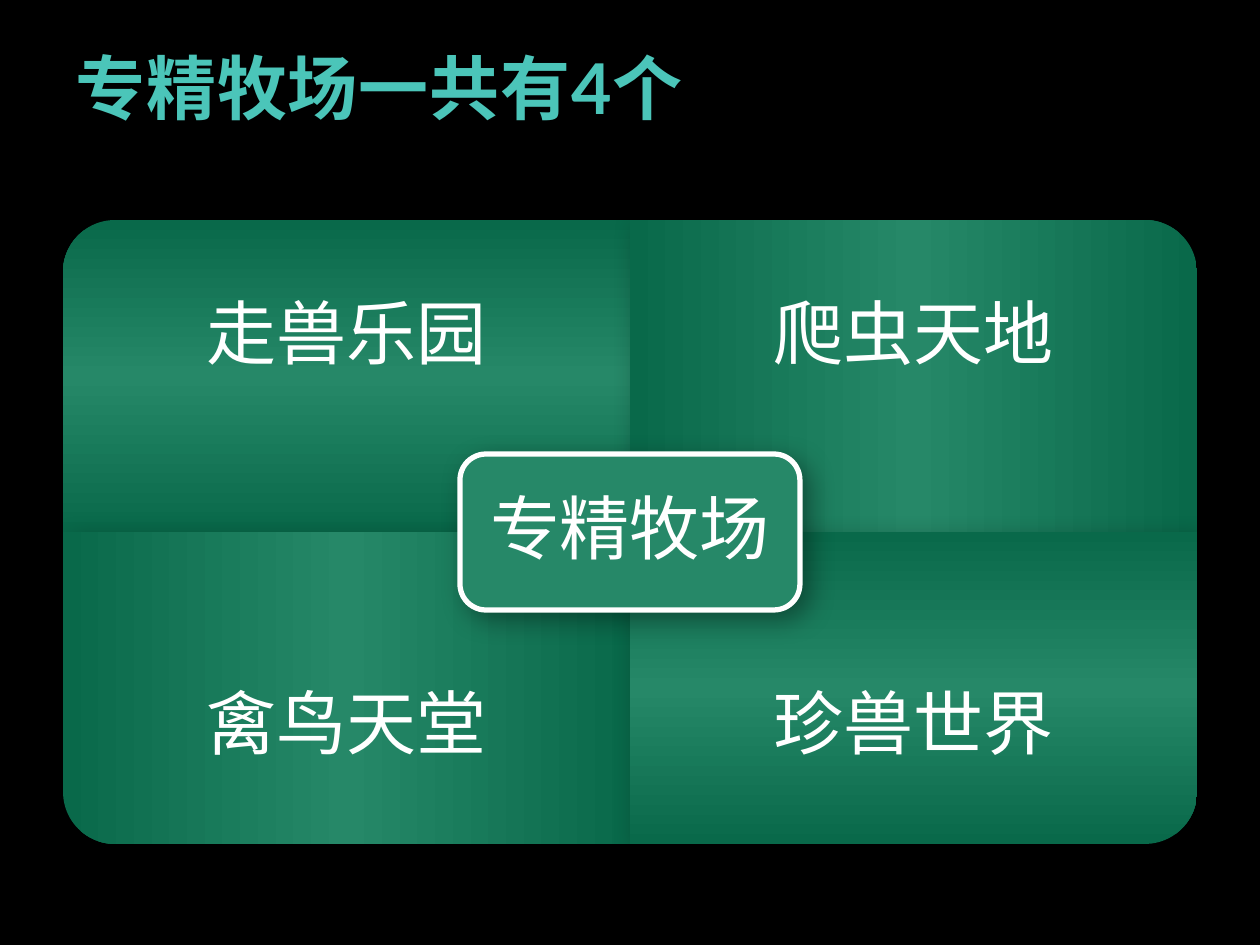
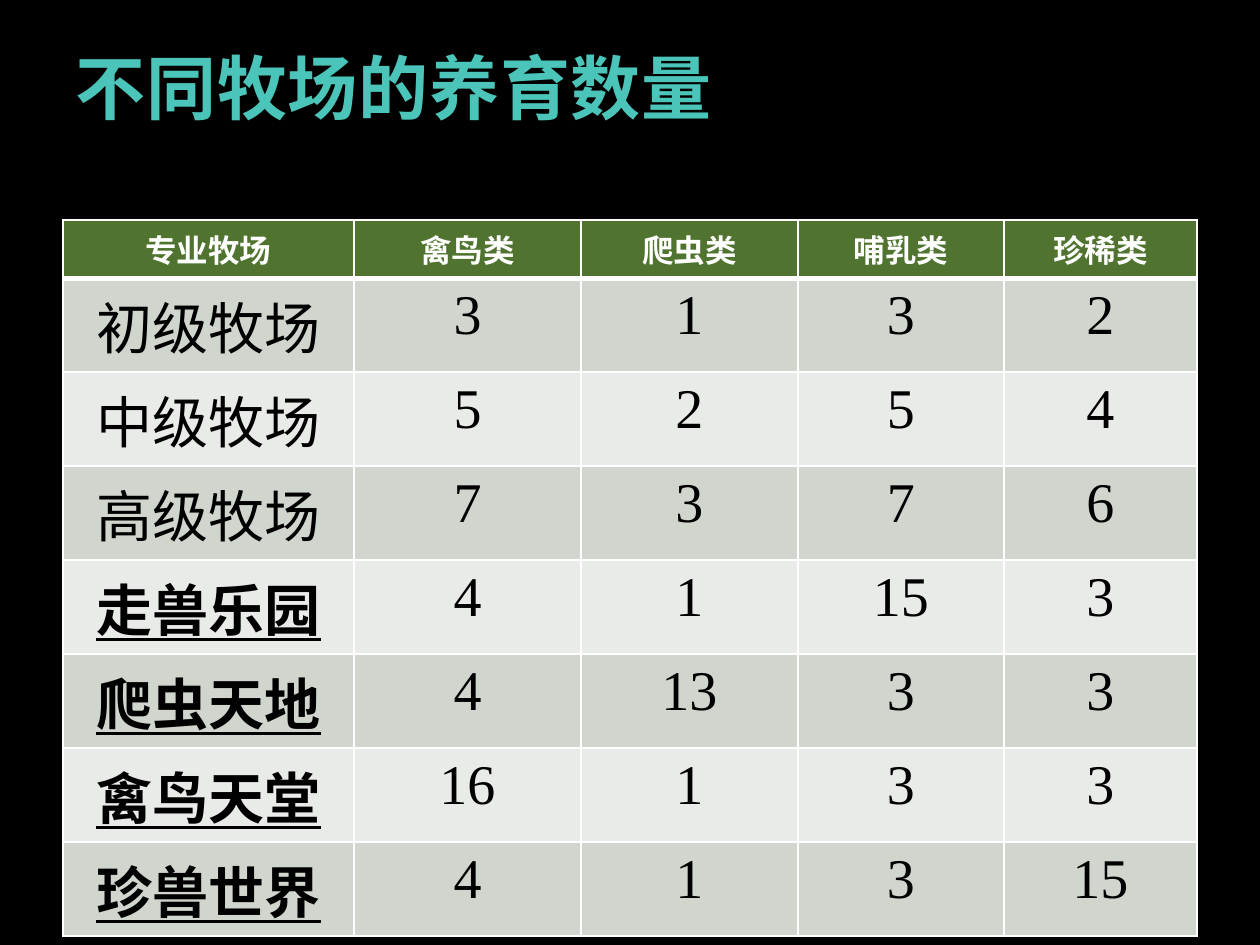
from lxml.etree import SubElement
from copy import deepcopy
from pptx import Presentation
from pptx.dml.color import RGBColor
from pptx.enum.lang import MSO_LANGUAGE_ID as Language
from pptx.enum.shapes import MSO_SHAPE as Shape
from pptx.enum.text import MSO_ANCHOR as Anchor, MSO_AUTO_SIZE as AutoSize, PP_ALIGN as Align
from pptx.oxml.ns import qn
from pptx.util import Emu, Pt

EMU_PER_PX = 914400 / 126

BLACK = RGBColor(0x00, 0x00, 0x00)
WHITE = RGBColor(0xFF, 0xFF, 0xFF)
TEAL = RGBColor(0x4B, 0xC5, 0xB9)
DARK_GREEN = RGBColor(0x09, 0x69, 0x4A)
MID_GREEN = RGBColor(0x26, 0x88, 0x68)
HEADER_GREEN = RGBColor(0x50, 0x74, 0x2F)
BANDS = (RGBColor(0xD0, 0xD6, 0xCD), RGBColor(0xE9, 0xEB, 0xE8))

TITLE_FONT, BODY_FONT = "Lato", "Times New Roman"
TITLE_BOX = (63, 38, 1071, 157)
MATRIX_BOX = (63, 220, 1134, 624)
TABLE_BOX = (63, 220, 1134, 716)

# Name, column, row and the rotation that turns the round corner outwards
QUADRANTS = [
    ("走兽乐园", 0, 0, 270),
    ("爬虫天地", 1, 0, 0),
    ("禽鸟天堂", 0, 1, 180),
    ("珍兽世界", 1, 1, 90),
]
SPECIAL_RANCHES = {name for name, *_ in QUADRANTS}
COLUMN_WIDTHS = (291, 227, 217, 206, 193)
HEADER_HEIGHT, ROW_HEIGHT = 58, 94
RANCH_ROWS = [
    ("专业牧场", "禽鸟类", "爬虫类", "哺乳类", "珍稀类"),
    ("初级牧场", 3, 1, 3, 2),
    ("中级牧场", 5, 2, 5, 4),
    ("高级牧场", 7, 3, 7, 6),
    ("走兽乐园", 4, 1, 15, 3),
    ("爬虫天地", 4, 13, 3, 3),
    ("禽鸟天堂", 16, 1, 3, 3),
    ("珍兽世界", 4, 1, 3, 15),
]


def px(*lengths):
    return [Emu(round(length * EMU_PER_PX)) for length in lengths]


def write(frame, text, size, color=WHITE, font=BODY_FONT, bold=False, underline=False,
          align=Align.CENTER, line_spacing=None):
    paragraph = frame.paragraphs[0]
    paragraph.alignment = align
    if line_spacing:
        paragraph.line_spacing = line_spacing
    run = paragraph.add_run()
    run.text = text
    run.font.name = font
    run.font.size = Pt(size)
    run.font.bold = bold
    run.font.underline = underline
    run.font.color.rgb = color
    run.font.language_id = Language.SIMPLIFIED_CHINESE
    return run


def write_label(shape, text, inset):
    frame = shape.text_frame
    frame.word_wrap = True
    frame.vertical_anchor = Anchor.MIDDLE
    frame.margin_left, frame.margin_top, frame.margin_right, frame.margin_bottom = px(*[inset] * 4)
    write(frame, text, 40, line_spacing=0.9)


def add_titled_slide(presentation, title):
    slide = presentation.slides.add_slide(presentation.slide_layouts[5])
    shape = slide.shapes.title
    shape.left, shape.top, shape.width, shape.height = px(*TITLE_BOX)
    frame = shape.text_frame
    frame.auto_size = AutoSize.NONE
    frame.vertical_anchor = Anchor.TOP
    run = write(frame, title, 40, TEAL, TITLE_FONT, bold=True, align=Align.LEFT)
    properties = run.font._element
    properties.set("spc", "50")
    SubElement(properties, qn("a:ea"), typeface=TITLE_FONT)
    return slide


def add_shadow(shape):
    shape.shadow.inherit = False
    effects = shape._element.spPr.find(qn("a:effectLst"))
    shadow = SubElement(effects, qn("a:outerShdw"), blurRad=str(Pt(15)), dist=str(Pt(6.2)),
                        dir="2700000", algn="tl", rotWithShape="0")
    color = SubElement(shadow, qn("a:srgbClr"), val=str(BLACK))
    SubElement(color, qn("a:alpha"), val="36000")


def fill_with_sheen(shape):
    """Fill with a gradient that is lightest halfway across."""
    shape.fill.gradient()
    shape.fill.gradient_angle = 0
    stop_list = shape._element.spPr.find(qn("a:gradFill")).find(qn("a:gsLst"))
    stop_list.append(deepcopy(stop_list[0]))
    colors = (DARK_GREEN, MID_GREEN, DARK_GREEN)
    for index, (stop, color) in enumerate(zip(shape.fill.gradient_stops, colors)):
        stop.position = index / 2
        stop.color.rgb = color


def add_quadrant(shapes, box, name, rotation):
    left, top, width, height = box
    sideways = rotation % 180 != 0
    across, down = (height, width) if sideways else (width, height)
    panel = shapes.add_shape(Shape.ROUND_1_RECTANGLE, *px(
        left + (width - across) / 2, top + (height - down) / 2, across, down))
    panel.rotation = rotation
    fill_with_sheen(panel)
    panel.line.fill.background()
    add_shadow(panel)


def add_matrix(slide, box, hub_text):
    left, top, width, height = box
    cell_width, cell_height = width // 2, height // 2
    label_height = cell_height * 3 // 4
    shapes = slide.shapes.add_group_shape().shapes
    for name, column, row, rotation in QUADRANTS:
        x, y = left + column * cell_width, top + row * cell_height
        add_quadrant(shapes, (x, y, cell_width, cell_height), name, rotation)
        label_top = y + row * (cell_height - label_height)
        label = shapes.add_textbox(*px(x, label_top, cell_width, label_height))
        write_label(label, name, inset=39)

    hub_width, hub_height = 340, cell_height // 2
    hub = shapes.add_shape(Shape.ROUNDED_RECTANGLE, *px(
        left + (width - hub_width) / 2, top + (height - hub_height) / 2, hub_width, hub_height))
    hub.fill.solid()
    hub.fill.fore_color.rgb = MID_GREEN
    hub.line.color.rgb = WHITE
    hub.line.width = Pt(3)
    add_shadow(hub)
    write_label(hub, hub_text, inset=21)


def set_borders(cell, **widths):
    properties = cell._tc.get_or_add_tcPr()
    for side in "LRTB":
        line = SubElement(properties, qn(f"a:ln{side}"), w=str(Pt(widths.get(side, 1))))
        fill = SubElement(line, qn("a:solidFill"))
        SubElement(fill, qn("a:srgbClr"), val=str(WHITE))


def add_ranch_table(slide, box):
    table = slide.shapes.add_table(len(RANCH_ROWS), len(COLUMN_WIDTHS), *px(*box)).table
    table.horz_banding = False
    for column, width in zip(table.columns, px(*COLUMN_WIDTHS)):
        column.width = width
    for row_index, values in enumerate(RANCH_ROWS):
        header = row_index == 0
        table.rows[row_index].height, = px(HEADER_HEIGHT if header else ROW_HEIGHT)
        for column_index, value in enumerate(values):
            cell = table.cell(row_index, column_index)
            set_borders(cell, T=3 if row_index == 1 else 1, B=3 if header else 1)
            cell.fill.solid()
            if header:
                cell.fill.fore_color.rgb = HEADER_GREEN
                write(cell.text_frame, value, 18, bold=True)
            else:
                cell.fill.fore_color.rgb = BANDS[(row_index - 1) % 2]
                special = value in SPECIAL_RANCHES
                write(cell.text_frame, str(value), 32, BLACK, bold=special, underline=special)


def main():
    presentation = Presentation()
    presentation.slide_width, presentation.slide_height = px(1260, 945)
    background = presentation.slide_master.background.fill
    background.solid()
    background.fore_color.rgb = BLACK

    add_matrix(add_titled_slide(presentation, "专精牧场一共有4个"), MATRIX_BOX, "专精牧场")
    add_ranch_table(add_titled_slide(presentation, "不同牧场的养育数量"), TABLE_BOX)
    presentation.save("out.pptx")


if __name__ == "__main__":
    main()
